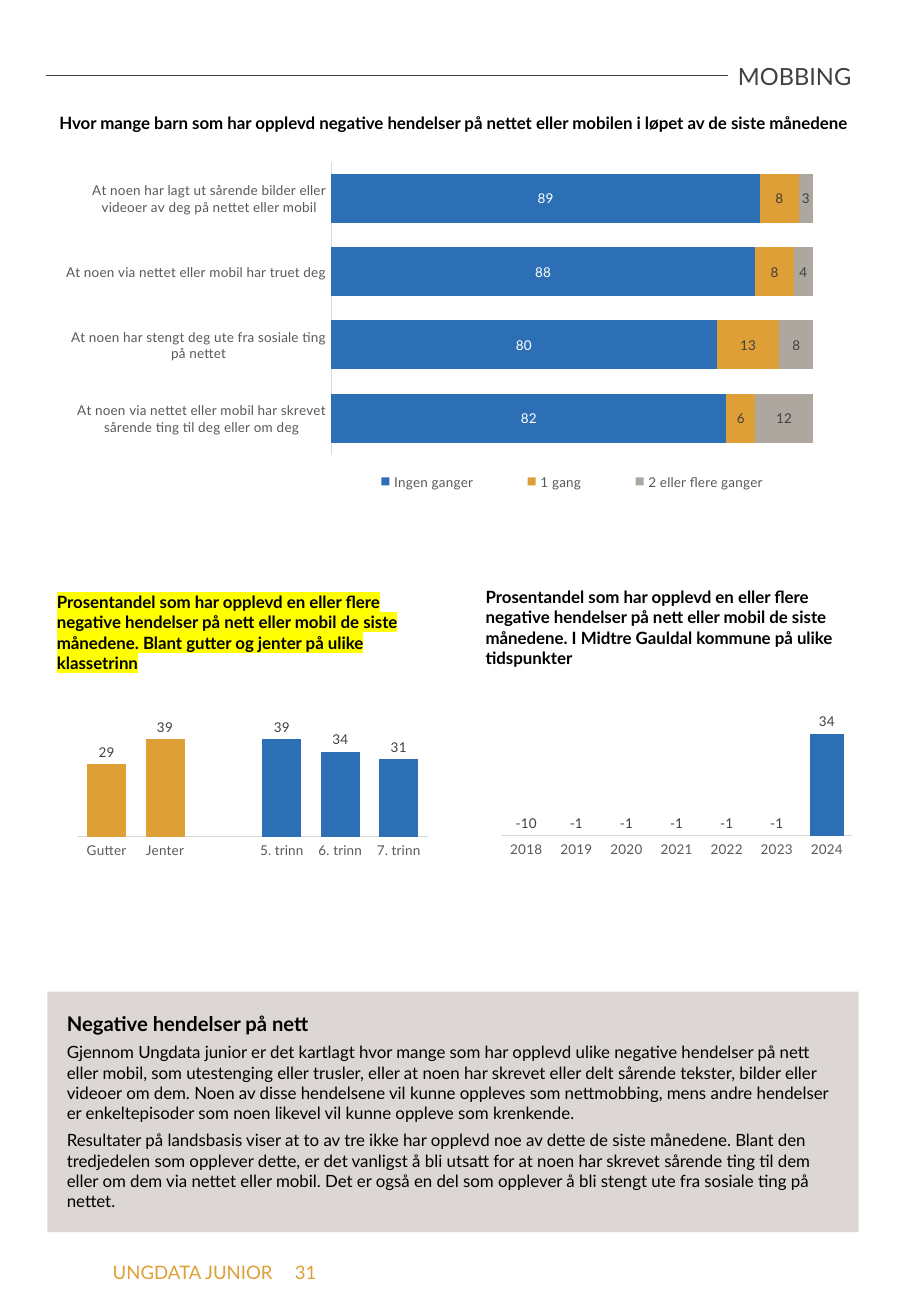
from lxml import etree
from pptx import Presentation
from pptx import util as u
from pptx.chart.data import CategoryChartData
from pptx.dml.color import RGBColor
from pptx.enum import chart as ch, shapes, text
from pptx.oxml import parse_xml
from pptx.oxml.ns import nsdecls, qn

FONT = "Lato"
BLACK = RGBColor(0x00, 0x00, 0x00)
WHITE = RGBColor(0xFF, 0xFF, 0xFF)
DARK = RGBColor(0x40, 0x40, 0x40)
GREY = RGBColor(0x59, 0x59, 0x59)
AXIS = RGBColor(0xD9, 0xD9, 0xD9)
BLUE = RGBColor(0x2C, 0x6F, 0xB4)
OCHRE = RGBColor(0xDE, 0x9F, 0x37)
STONE = RGBColor(0xAD, 0xA7, 0xA0)
PANEL = RGBColor(0xA8, 0x9D, 0x94)
YELLOW = RGBColor(0xFF, 0xFF, 0x00)


def inches(*lengths):
    return [u.Inches(v) for v in lengths]


def style(font, size, color, bold=None):
    font.name, font.size, font.bold = FONT, u.Pt(size), bold
    font.color.rgb = color


def write(p, words, size=10, color=BLACK, bold=False, align=text.PP_ALIGN.LEFT,
          after=0, highlight=None):
    p.alignment = align
    p.space_after = u.Pt(after)
    r = p.add_run()
    r.text = words
    style(r.font, size, color, bold)
    if highlight is not None:
        mark = parse_xml(f'<a:highlight {nsdecls("a")}><a:srgbClr val="{highlight}"/></a:highlight>')
        r.font._element.find(qn("a:solidFill")).addnext(mark)


def frame(sp):
    tf = sp.text_frame
    tf.word_wrap = True
    tf.auto_size = text.MSO_AUTO_SIZE.SHAPE_TO_FIT_TEXT
    tf.vertical_anchor = text.MSO_ANCHOR.TOP
    return tf


def text_box(s, box, words, **fmt):
    p = frame(s.shapes.add_textbox(*inches(*box))).paragraphs[0]
    write(p, words, **fmt)
    return p


def set_layout(parent, index, box, inner=False):
    for old in parent.findall(qn("c:layout")):
        parent.remove(old)
    target = '<c:layoutTarget val="inner"/>' if inner else ""
    modes = '<c:xMode val="edge"/><c:yMode val="edge"/>'
    sizes = "".join(f'<c:{k} val="{v}"/>' for k, v in zip("xywh", box))
    parent.insert(index, parse_xml(f'<c:layout {nsdecls("c")}><c:manualLayout>{target}'
                                   f'{modes}{sizes}</c:manualLayout></c:layout>'))


def bar_chart(s, kind, box, plot_box, cats, series, overlap, label_pos):
    """series: list of (name, values, fill colour, label colour)."""
    data = CategoryChartData(number_format="0")
    data.categories = cats
    for name, values, *_ in series:
        data.add_series(name, values)
    chart = s.shapes.add_chart(kind, *inches(*box), data).chart
    style(chart.font, 8, BLACK)
    chart.has_title = chart.has_legend = False

    # Axes
    cat, val = chart.category_axis, chart.value_axis
    cat.major_tick_mark = cat.minor_tick_mark = ch.XL_TICK_MARK.NONE
    cat.has_major_gridlines = val.has_major_gridlines = False
    cat.format.line.color.rgb = AXIS
    cat.format.line.width = u.Pt(0.75)
    style(cat.tick_labels.font, 8, GREY)
    val.visible = False
    val.minimum_scale = 0

    # Bars and labels
    plot = chart.plots[0]
    plot.gap_width, plot.overlap, plot.vary_by_categories = 50, overlap, False
    for ser, (_, _, fill, label) in zip(plot.series, series):
        ser.invert_if_negative = False
        ser.format.fill.solid()
        ser.format.fill.fore_color.rgb = fill
        dl = ser.data_labels
        dl.show_value = True
        dl.number_format, dl.number_format_is_linked = "0", False
        dl.position = label_pos
        style(dl.font, 8, label)
    set_layout(chart._chartSpace.chart.plotArea, 0, plot_box, inner=True)
    return chart


def header(s, box, words):
    x, y, w, h = box
    title = s.shapes.title
    title.left, title.top, title.width, title.height = inches(*box)
    write(frame(title).paragraphs[0], words, size=14, color=DARK, align=text.PP_ALIGN.RIGHT)
    line = s.shapes.add_connector(shapes.MSO_CONNECTOR.STRAIGHT,
                                  *inches(x, y + 0.16, x + w - 1.12, y + 0.16))
    line.line.color.rgb = DARK
    line.line.width = u.Pt(0.3)
    etree.SubElement(line._element.spPr, qn("a:effectLst"))


def footer(s, box, words, tabs):
    p = text_box(s, box, words, size=11, color=OCHRE)
    stops = "".join(f'<a:tab pos="{u.Inches(t)}" algn="l"/>' for t in tabs)
    p._p.get_or_add_pPr().append(parse_xml(f'<a:tabLst {nsdecls("a")}>{stops}</a:tabLst>'))


def events_section(s, box):
    x, y, w, h = box
    text_box(s, (x, y, w, 0.44), "Hvor mange barn som har opplevd negative hendelser på nettet "
             "eller mobilen i løpet av de siste månedene", bold=True)
    cats = ["At noen har lagt ut sårende bilder eller videoer av deg på nettet eller mobil",
            "At noen via nettet eller mobil har truet deg",
            "At noen har stengt deg ute fra sosiale ting på nettet",
            "At noen via nettet eller mobil har skrevet sårende ting til deg eller om deg"]
    series = [("Ingen ganger", (89, 88, 80, 82), BLUE, WHITE),
              ("1 gang", (8, 8, 13, 6), OCHRE, DARK),
              ("2 eller flere ganger", (3, 4, 8, 12), STONE, DARK)]
    chart = bar_chart(s, ch.XL_CHART_TYPE.BAR_STACKED, (x + 0.11, y + 0.42, w - 0.3, h - 0.42),
                      (0.347, 0.011, 0.618, 0.865), cats, series, 100,
                      ch.XL_LABEL_POSITION.CENTER)
    chart.category_axis.reverse_order = True
    chart.value_axis.maximum_scale = 100
    chart.has_legend = True
    legend = chart.legend
    legend.position = ch.XL_LEGEND_POSITION.BOTTOM
    legend.include_in_layout = False
    style(legend.font, 8, GREY)
    set_layout(legend._element, 1, (0.347, 0.93, 0.618, 0.07))


def share_section(s, box, ending, chart_box, plot_box, cats, values, ochre=(), highlight=None):
    x, y, w, h = box
    dx, dy, cw, chh = chart_box
    text_box(s, box, "Prosentandel som har opplevd en eller flere negative hendelser på nett "
             "eller mobil de siste månedene. " + ending, bold=True, highlight=highlight)
    chart = bar_chart(s, ch.XL_CHART_TYPE.COLUMN_CLUSTERED, (x + dx, y + dy, cw, chh), plot_box,
                      cats, [("Series 1", values, BLUE, DARK)], -10,
                      ch.XL_LABEL_POSITION.OUTSIDE_END)
    for i in ochre:
        fill = chart.plots[0].series[0].points[i].format.fill
        fill.solid()
        fill.fore_color.rgb = OCHRE


def fact_panel(s, box, heading, paragraphs):
    sp = s.shapes.add_shape(shapes.MSO_SHAPE.RECTANGLE, *inches(*box))
    sp.shadow.inherit = False
    sp.line.fill.background()
    sp.fill.solid()
    sp.fill.fore_color.rgb = PANEL
    color = sp._element.spPr.find(qn("a:solidFill"))[0]
    etree.SubElement(color, qn("a:alpha"), val="40000")
    tf = frame(sp)
    tf.margin_left = tf.margin_right = tf.margin_top = tf.margin_bottom = u.Inches(0.16)
    write(tf.paragraphs[0], heading, size=12, bold=True, after=4)
    for words in paragraphs:
        write(tf.add_paragraph(), words, after=4)


def main():
    prs = Presentation()
    prs.slide_width, prs.slide_height = inches(7.5, 10.83)
    s = prs.slides.add_slide(prs.slide_layouts[5])

    header(s, (0.38, 0.46, 6.73, 0.34), "MOBBING")
    footer(s, (0.33, 10.33, 7.17, 0.29), "\tUNGDATA JUNIOR\t31", (0.5, 2))
    events_section(s, (0.39, 0.88, 6.72, 3.21))
    share_section(s, (0.37, 4.82, 3.18, 0.77), "Blant gutter og jenter på ulike klassetrinn",
                  (0.19, 0.81, 2.98, 1.51), (0.026, 0.22, 0.969, 0.612),
                  ["Gutter", "Jenter", "", "5. trinn", "6. trinn", "7. trinn"],
                  (29, 39, None, 39, 34, 31), ochre=(0, 1), highlight=YELLOW)
    share_section(s, (3.9, 4.78, 3.26, 0.77), "I Midtre Gauldal kommune på ulike tidspunkter",
                  (0.15, 0.94, 2.98, 1.39), (0.026, 0.123, 0.969, 0.71),
                  [str(year) for year in range(2018, 2025)], (-10, -1, -1, -1, -1, -1, 34))
    fact_panel(s, (0.39, 8.16, 6.68, 1.98), "Negative hendelser på nett", [
        "Gjennom Ungdata junior er det kartlagt hvor mange som har opplevd ulike negative "
        "hendelser på nett eller mobil, som utestenging eller trusler, eller at noen har skrevet "
        "eller delt sårende tekster, bilder eller videoer om dem. Noen av disse hendelsene vil "
        "kunne oppleves som nettmobbing, mens andre hendelser er enkeltepisoder som noen "
        "likevel vil kunne oppleve som krenkende.",
        "Resultater på landsbasis viser at to av tre ikke har opplevd noe av dette de siste "
        "månedene. Blant den tredjedelen som opplever dette, er det vanligst å bli utsatt for at "
        "noen har skrevet sårende ting til dem eller om dem via nettet eller mobil. Det er også "
        "en del som opplever å bli stengt ute fra sosiale ting på nettet."])
    prs.save("out.pptx")


if __name__ == "__main__":
    main()
